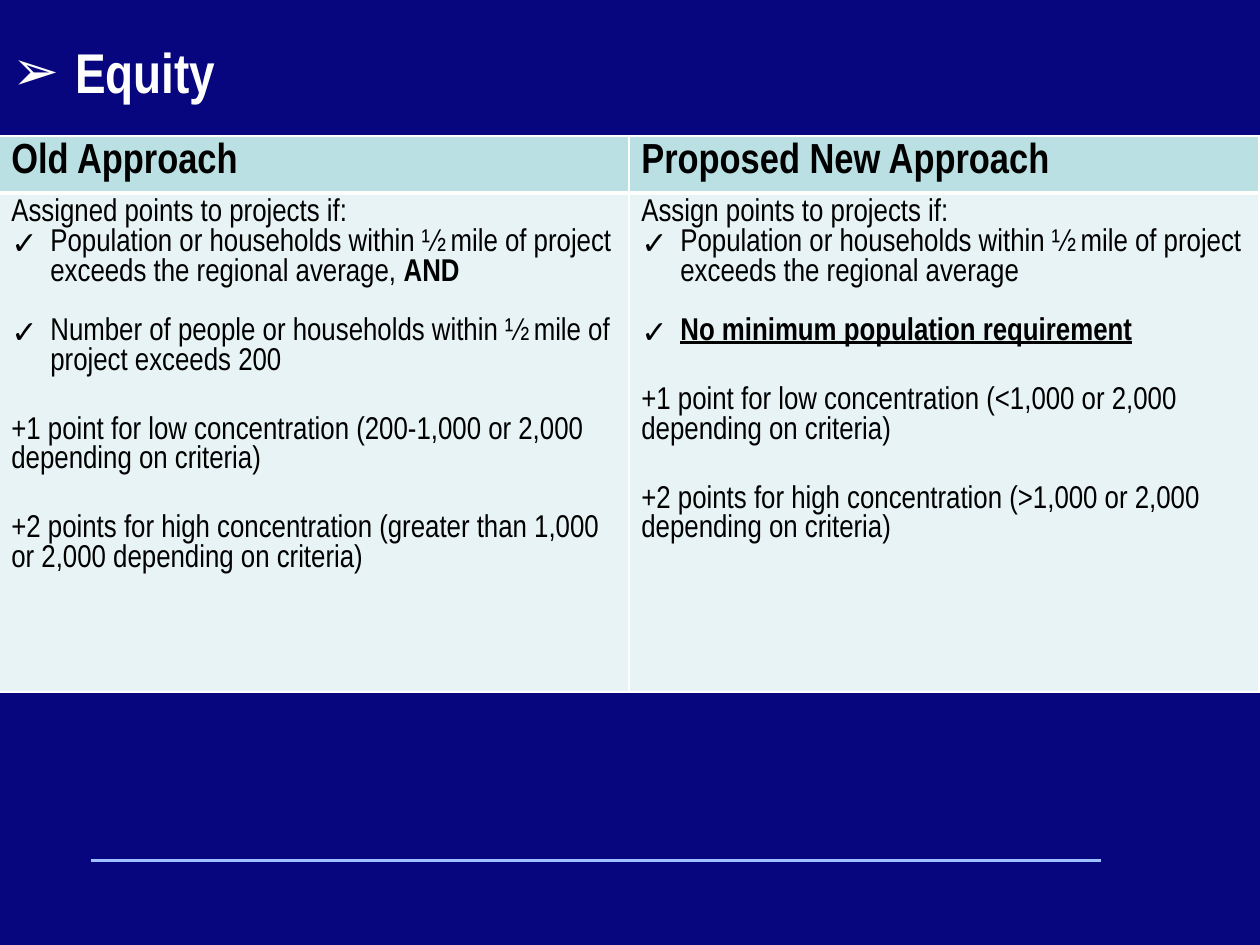
from lxml import etree
from pptx import Presentation
from pptx.dml.color import RGBColor
from pptx.enum.shapes import MSO_CONNECTOR
from pptx.oxml.ns import qn
from pptx.util import Inches, Pt

STRAIGHT = MSO_CONNECTOR.STRAIGHT
NAVY = RGBColor(0x07, 0x06, 0x7E)
WHITE = RGBColor(0xFE, 0xFF, 0xFC)
BLACK = RGBColor(0, 0, 0)
TEAL = RGBColor(0xBB, 0xE0, 0xE3)
PALE = RGBColor(0xE7, 0xF3, 0xF4)
SKY = RGBColor(0x9D, 0xC2, 0xFF)
FONT = "Arial Narrow"
BULLET_FONT = "Arial"

TITLE = "Equity"
HEADERS = ["Old Approach", "Proposed New Approach"]
PLAIN, BOLD, MARKED = (False, False), (True, False), (True, True)
BODIES = [
    [
        (None, 0, [("Assigned points to projects if:", PLAIN)]),
        ("✓", 0, [("Population or households within ½ mile of project exceeds the regional average, ", PLAIN),
                  ("AND", BOLD)]),
        ("✓", 17, [("Number of people or households within ½ mile of project exceeds 200", PLAIN)]),
        (None, 22.5, [("+1 point for low concentration (200-1,000 or 2,000 depending on criteria)", PLAIN)]),
        (None, 22.5, [("+2 points for high concentration (greater than 1,000 or 2,000 depending on criteria)", PLAIN)]),
    ],
    [
        (None, 0, [("Assign points to projects if:", PLAIN)]),
        ("✓", 0, [("Population or households within ½ mile of project exceeds the regional average", PLAIN)]),
        ("✓", 17, [("No minimum population requirement", MARKED)]),
        (None, 22.5, [("+1 point for low concentration (<1,000 or 2,000 depending on criteria)", PLAIN)]),
        (None, 22.5, [("+2 points for high concentration (>1,000 or 2,000 depending on criteria)", PLAIN)]),
    ],
]
ROW_HEIGHTS = [0.41, 3.96]


def add_bullet(para, mark, indent):
    props = para._p.get_or_add_pPr()
    props.set("marL", str(Inches(indent)))
    props.set("indent", str(-Inches(indent)))
    etree.SubElement(props, qn("a:buFont")).set("typeface", BULLET_FONT)
    etree.SubElement(props, qn("a:buChar")).set("char", mark)


def add_span(para, text, size, color, style):
    span = para.add_run()
    span.text = text
    span.font.name = FONT
    span.font.size = Pt(size)
    span.font.color.rgb = color
    span.font.bold, underlined = style
    if underlined:
        span.font.underline = True


def fill_text(frame, paragraphs, size):
    for number, (mark, gap, runs) in enumerate(paragraphs):
        para = frame.add_paragraph() if number else frame.paragraphs[0]
        if gap:
            para.space_before = Pt(gap)
        if mark:
            add_bullet(para, mark, 0.31)
        for text, style in runs:
            add_span(para, text, size, BLACK, style)


def style_cell(cell, color, borders):
    cell.fill.solid()
    cell.fill.fore_color.rgb = color
    props = cell._tc.get_or_add_tcPr()
    for position, (side, width) in enumerate(zip("LRTB", borders)):
        line = etree.Element(qn("a:ln" + side), w=str(Pt(width)))
        solid = etree.SubElement(line, qn("a:solidFill"))
        etree.SubElement(solid, qn("a:srgbClr")).set("val", str(WHITE))
        props.insert(position, line)


def main():
    deck = Presentation()
    deck.slide_width, deck.slide_height = Inches(10), Inches(7.5)
    page = deck.slides.add_slide(deck.slide_layouts[6])
    page.background.fill.solid()
    page.background.fill.fore_color.rgb = NAVY

    rule = page.shapes.add_connector(STRAIGHT, Inches(0.72), Inches(6.83), Inches(8.74), Inches(6.83))
    rule.line.color.rgb = SKY
    rule.line.width = Pt(1.5)
    etree.SubElement(rule._element.spPr, qn("a:effectLst"))

    box = page.shapes.add_textbox(Inches(0), Inches(0.25), Inches(8.5), Inches(4.5))
    box.text_frame.word_wrap = True
    para = box.text_frame.paragraphs[0]
    add_bullet(para, "➢", 0.5)
    add_span(para, TITLE, 32, WHITE, BOLD)

    table = page.shapes.add_table(2, 2, Inches(-0.01), Inches(1.08), Inches(10), Inches(sum(ROW_HEIGHTS))).table
    for row, height in zip(table.rows, ROW_HEIGHTS):
        row.height = Inches(height)
    for column, (header, body) in enumerate(zip(HEADERS, BODIES)):
        top, bottom = table.cell(0, column), table.cell(1, column)
        top.margin_bottom = 0
        style_cell(top, TEAL, (1, 1, 1, 3))
        style_cell(bottom, PALE, (1, 1, 3, 1))
        fill_text(top.text_frame, [(None, 0, [(header, BOLD)])], 24)
        fill_text(bottom.text_frame, body, 18)

    deck.save("out.pptx")


if __name__ == "__main__":
    main()
